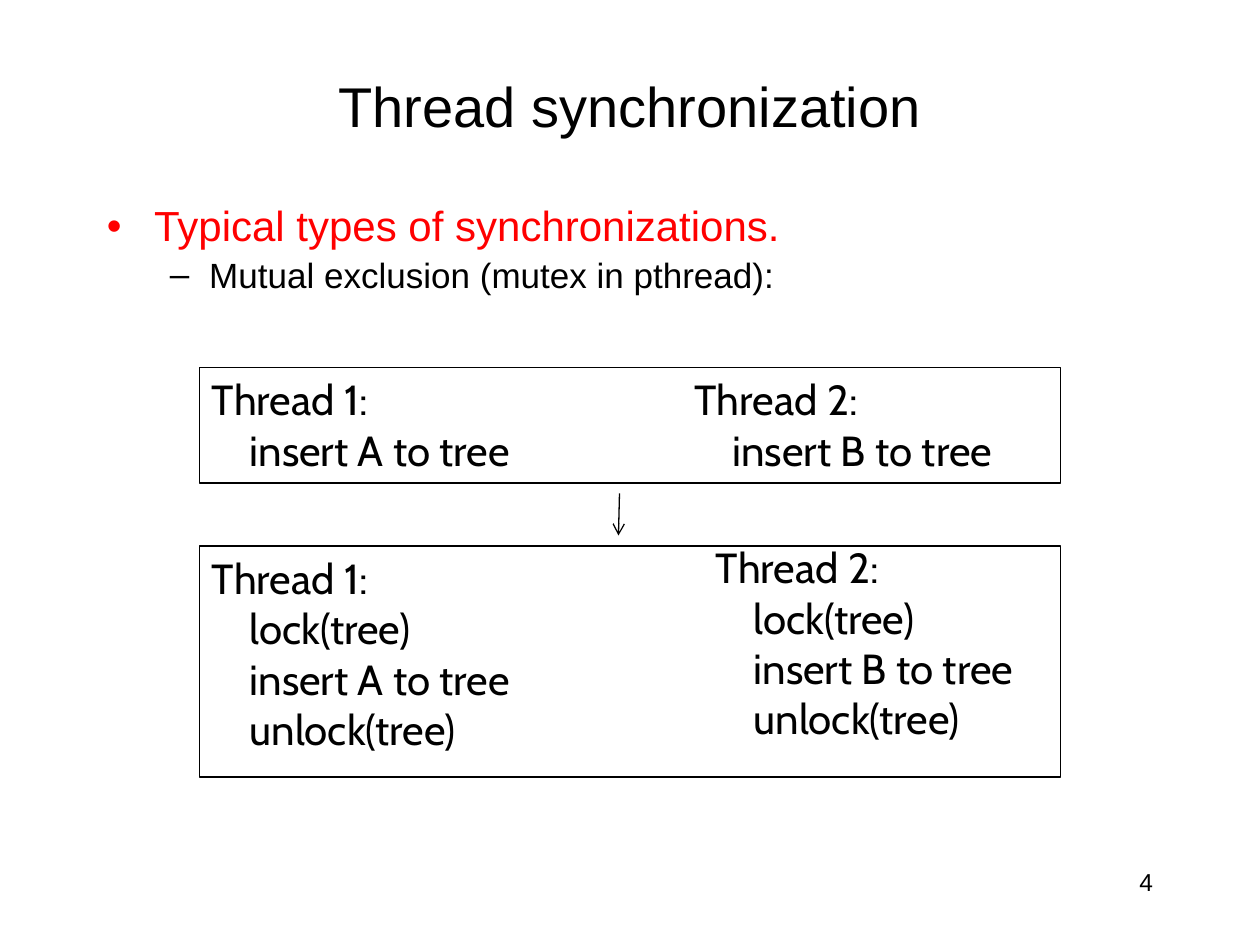
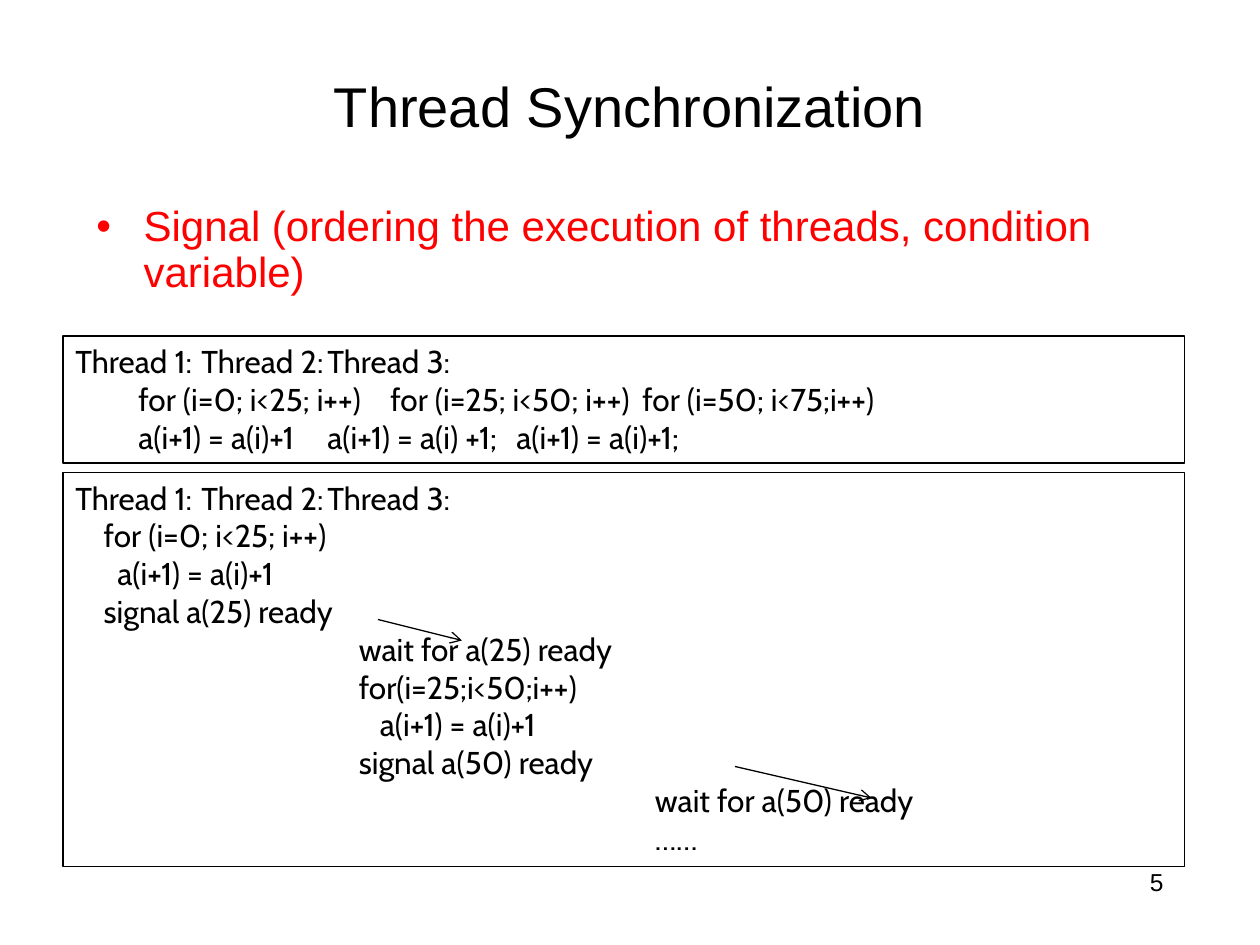
from dataclasses import dataclass

import pptx
import pptx.dml.color
import pptx.enum.shapes
import pptx.enum.text
import pptx.oxml
import pptx.oxml.ns
import pptx.util

Align = pptx.enum.text.PP_ALIGN
Anchor = pptx.enum.text.MSO_ANCHOR
COLS, ROWS = 120, 90
WIDE, HIGH = pptx.util.Inches(10), pptx.util.Inches(7.5)


@dataclass(frozen=True)
class Theme:
    ink: str = "000000"
    key: str = "FF0000"
    sans: str = "Arial"
    code: str = "Cabin"
    title: int = 32
    head: int = 24
    sub: int = 20
    small: int = 18
    page: int = 14
    rule: float = 0.75


THEME = Theme()


@dataclass(frozen=True)
class Area:
    """A place on the grid, in columns and rows."""
    left: float
    top: float
    width: float
    height: float


@dataclass(frozen=True)
class Line:
    """One paragraph; left, hang and stops are in grid columns."""
    text: str
    left: float = 0
    hang: float = 0
    mark: str = ""
    stops: tuple[float, ...] = ()
    size: int | None = None
    color: str | None = None


@dataclass(frozen=True)
class Arrow:
    left: float
    top: float
    right: float
    end: float


@dataclass(frozen=True)
class Block:
    """Thread code set in an area, with or without a frame."""
    area: Area
    lines: tuple[Line, ...]
    size: int
    framed: bool = False


@dataclass(frozen=True)
class Page:
    number: str
    title: str
    shift: float
    points: tuple[Line, ...]
    blocks: tuple[Block, ...]
    arrows: tuple[Arrow, ...]


def across(cols: float) -> int:
    return round(WIDE * cols / COLS)


def down(rows: float) -> int:
    return round(HIGH * rows / ROWS)


def place(area: Area) -> tuple[int, int, int, int]:
    return across(area.left), down(area.top), across(area.width), down(area.height)


def tint(code: str) -> pptx.dml.color.RGBColor:
    return pptx.dml.color.RGBColor.from_string(code)


def add(parent, tag: str, **attrs):
    """Append an empty drawing element to an XML parent."""
    node = pptx.oxml.parse_xml(f"<a:{tag} {pptx.oxml.ns.nsdecls('a')}/>")
    for name, value in attrs.items():
        node.set(name, str(value))
    parent.append(node)
    return node


def write(shape, lines: tuple[Line, ...], *, size: int, font: str = THEME.sans,
          align=Align.LEFT, anchor=Anchor.TOP, spacing: float = 1, before: float = 0) -> None:
    frame = shape.text_frame
    frame.word_wrap = True
    frame.vertical_anchor = anchor
    for index, line in enumerate(lines):
        para = frame.paragraphs[0] if index == 0 else frame.add_paragraph()
        props = para._p.get_or_add_pPr()
        props.set("marL", str(across(line.left)))
        props.set("indent", str(-across(line.hang)))
        if line.mark:
            add(props, "buFont", typeface=THEME.sans)
            add(props, "buChar", char=line.mark)
        if line.stops:
            tabs = add(props, "tabLst")
            for stop in line.stops:
                add(tabs, "tab", pos=across(stop), algn="l")
        para.alignment = align
        para.line_spacing = spacing
        if index:
            para.space_before = pptx.util.Pt(before)
        run = para.add_run()
        run.text = line.text
        run.font.name = font
        run.font.size = pptx.util.Pt(line.size or size)
        run.font.color.rgb = tint(line.color or THEME.ink)


def label(slide, area: Area, lines: tuple[Line, ...], **style) -> None:
    write(slide.shapes.add_textbox(*place(area)), lines, **style)


def stroke(shape) -> None:
    shape.line.color.rgb = tint(THEME.ink)
    shape.line.width = pptx.util.Pt(THEME.rule)


def draw_frame(slide, area: Area):
    box = slide.shapes.add_shape(pptx.enum.shapes.MSO_SHAPE.RECTANGLE, *place(area))
    box.shadow.inherit = False
    box.fill.background()
    stroke(box)
    return box


def draw_block(slide, block: Block) -> None:
    style = dict(size=block.size, font=THEME.code)
    if not block.framed:
        label(slide, block.area, block.lines, **style)
        return
    box = draw_frame(slide, block.area)
    if block.lines:
        write(box, block.lines, **style)


def draw_arrow(slide, arrow: Arrow) -> None:
    line = slide.shapes.add_connector(
        pptx.enum.shapes.MSO_CONNECTOR.STRAIGHT,
        across(arrow.left), down(arrow.top), across(arrow.right), down(arrow.end))
    stroke(line)
    add(line.line._get_or_add_ln(), "tailEnd", type="arrow")
    add(line._element.spPr, "effectLst")


def draw_page(deck, page: Page) -> None:
    slide = deck.slides.add_slide(deck.slide_layouts[6])
    label(slide, Area(9, 5, 102, 10), (Line(page.title),),
          size=THEME.title, align=Align.CENTER, anchor=Anchor.MIDDLE)
    label(slide, Area(9 - page.shift, 19, 102, 12), page.points,
          size=THEME.head, spacing=0.9, before=4)
    for block in page.blocks:
        draw_block(slide, block)
    for arrow in page.arrows:
        draw_arrow(slide, arrow)
    label(slide, Area(86 + page.shift, 82, 25, 6), (Line(page.number),),
          size=THEME.page, align=Align.RIGHT)


def point(text: str) -> Line:
    return Line(text, 4.5, 4.5, "•", color=THEME.key)


def thread(left: float, top: float, name: str, *steps: str) -> Block:
    lines = (Line(name), *(Line(step, 3.6) for step in steps))
    return Block(Area(left, top, 35, 5 * len(lines) + 1), lines, THEME.head)


def outline(top: float, height: float) -> Block:
    return Block(Area(19, top, 82, height), (), THEME.head, True)


def listing(top: float, height: float, *lines: Line) -> Block:
    names = Line("Thread 1:\tThread 2:\tThread 3:", stops=(28, 55.8))
    return Block(Area(6, top, 106.8, height), (names, *lines), THEME.small, True)


LOOP, STEP = "for (i=0; i<25; i++)", "a(i+1) = a(i)+1"

PAGES = (
    Page(
        "4", "Thread synchronization", 0,
        (point("Typical types of synchronizations."),
         Line("Mutual exclusion (mutex in pthread):", 9.75, 3.75, "–", size=THEME.sub)),
        (thread(19, 35, "Thread 1:", "insert A to tree"),
         thread(65, 35, "Thread 2:", "insert B to tree"),
         thread(19, 52, "Thread 1:", "lock(tree)", "insert A to tree", "unlock(tree)"),
         thread(67, 51, "Thread 2:", "lock(tree)", "insert B to tree", "unlock(tree)"),
         outline(35, 11), outline(52, 22)),
        (Arrow(59, 47, 58.9, 51),),
    ),
    Page(
        "5", "Thread Synchronization", 1,
        (point("Signal (ordering the execution of threads, condition variable)"),),
        (listing(
            32, 12.1,
            Line(f"\t{LOOP}\tfor (i=25; i<50; i++)\tfor (i=50; i<75;i++)",
                 stops=(2.7, 30, 58.8)),
            Line(f"\t{STEP}\ta(i+1) = a(i) +1;\t{STEP};", stops=(4, 29.6, 55.2))),
         listing(
            45, 37.5,
            Line(LOOP, 2.7), Line(STEP, 4), Line("signal a(25) ready", 2.7),
            Line("wait for a(25) ready", 27), Line("for(i=25;i<50;i++)", 27),
            Line(STEP, 29), Line("signal a(50) ready", 27),
            Line("wait for a(50) ready", 55.2), Line("……", 55.2))),
        (Arrow(70, 73, 83, 76), Arrow(36, 59, 44, 61)),
    ),
)


def main() -> None:
    deck = pptx.Presentation()
    deck.slide_width, deck.slide_height = WIDE, HIGH
    for page in PAGES:
        draw_page(deck, page)
    deck.save("out.pptx")


if __name__ == "__main__":
    main()
